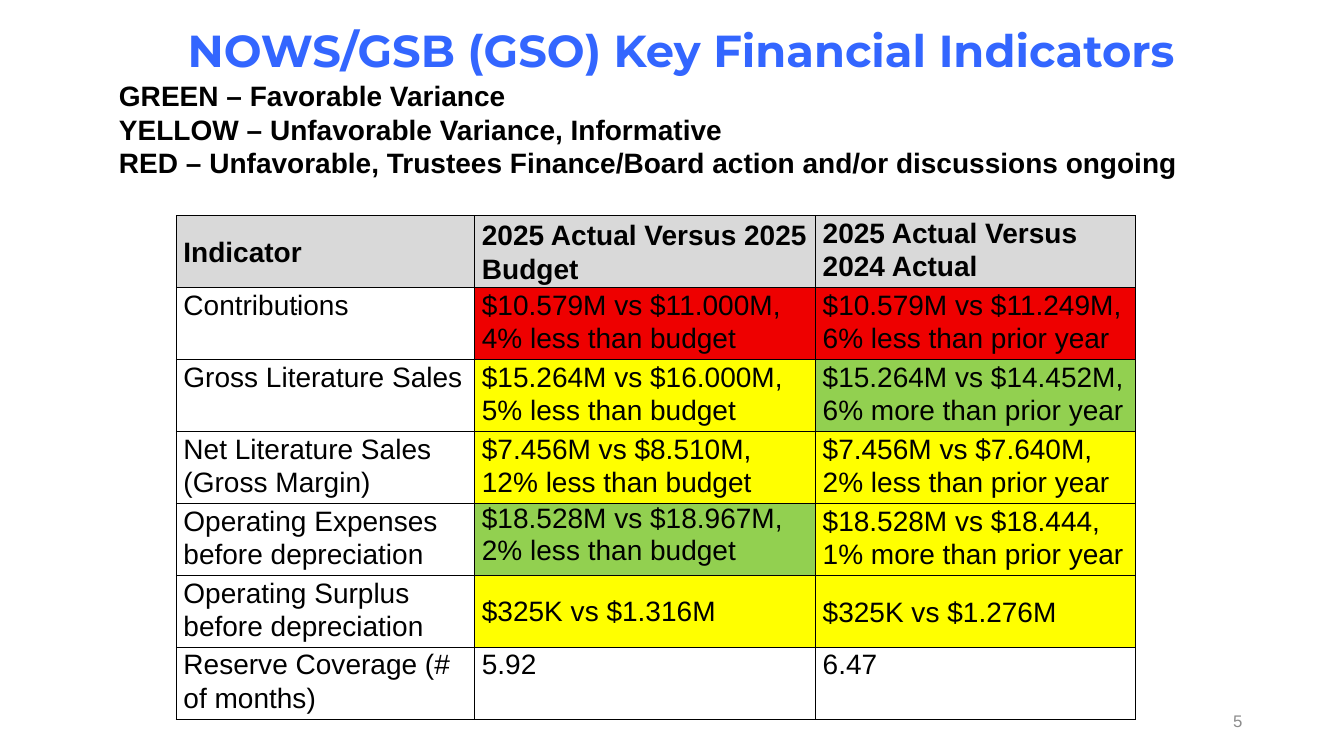
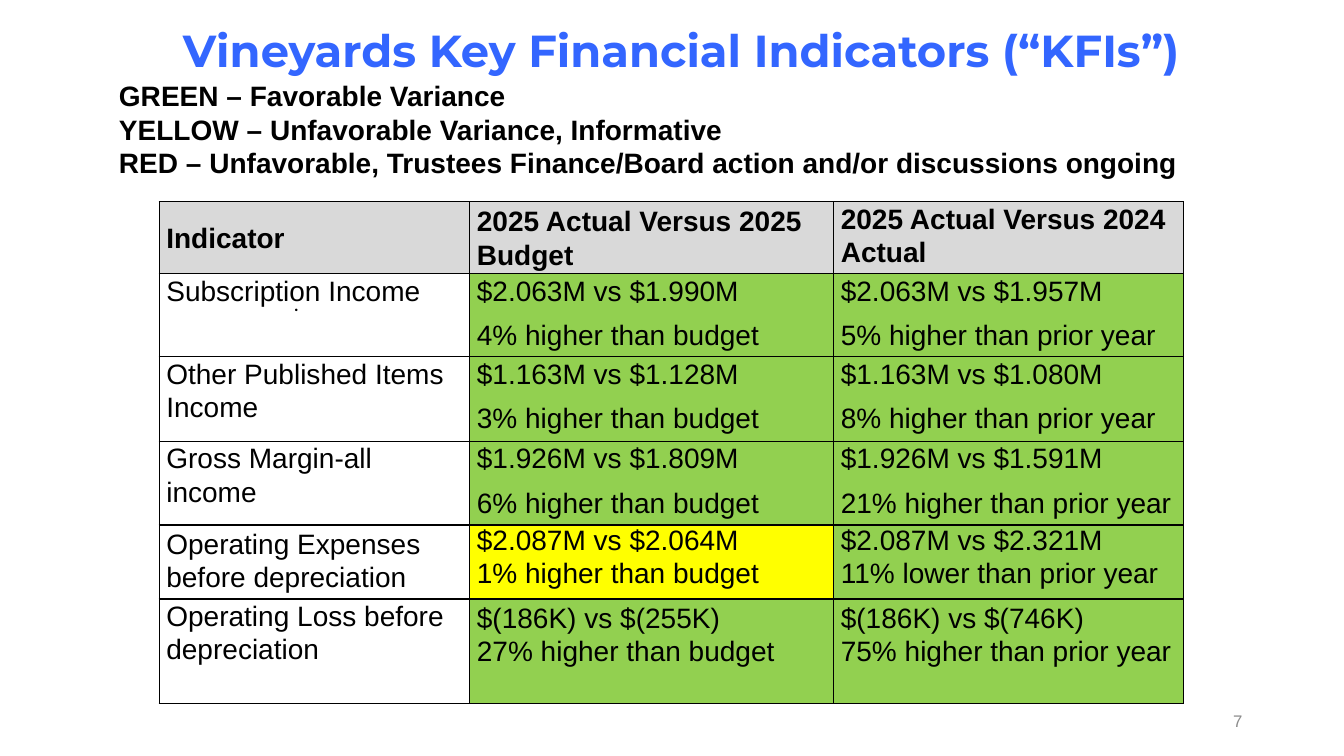
from dataclasses import dataclass

from lxml.etree import SubElement
from pptx import Presentation
from pptx.dml.color import RGBColor
from pptx.enum.text import MSO_ANCHOR, MSO_AUTO_SIZE, PP_ALIGN
from pptx.oxml import parse_xml
from pptx.oxml.ns import nsdecls, qn
from pptx.util import Inches, Pt


@dataclass(frozen=True)
class Theme:
    """Colours, fonts and type sizes of the whole presentation."""

    title_color: str = "3366FF"
    text_color: str = "000000"
    number_color: str = "8C8C8C"
    header: str = "D9D9D9"
    red: str = "EE0000"
    yellow: str = "FFFF00"
    green: str = "92D050"
    title_font: str = "Montserrat"
    text_font: str = "Arial"
    mark_font: str = "Calibri"
    title_size: int = 32
    text_size: int = 20
    small_size: int = 12
    border_width: int = 1


@dataclass(frozen=True)
class Entry:
    """Content and look of one table cell."""

    lines: tuple
    fill: str = ""
    tight: bool = False
    anchor: MSO_ANCHOR = MSO_ANCHOR.TOP
    bold: bool = False
    top_margin: float = 0


@dataclass(frozen=True)
class Box:
    """A region of the slide in inches."""

    left: float
    top: float
    width: float
    height: float

    def lengths(self):
        """Return the four measures as lengths."""
        return tuple(map(Inches, (self.left, self.top, self.width, self.height)))


THEME = Theme()
HEADING_BOX = Box(1.08, 0.24, 11.5, 1.6)
NUMBER_BOX = Box(9.42, 6.95, 3, 0.4)
MARK_BOX = Box(2.82, 2.87, 0.4, 0.3)
LEGEND = (
    "GREEN – Favorable Variance",
    "YELLOW – Unfavorable Variance, Informative",
    "RED – Unfavorable, Trustees Finance/Board action and/or discussions ongoing",
)
HEADER = (
    Entry(("Indicator",), "header", anchor=MSO_ANCHOR.MIDDLE, bold=True),
    Entry(("2025 Actual Versus 2025 Budget",), "header", anchor=MSO_ANCHOR.MIDDLE, bold=True),
    Entry(("2025 Actual Versus 2024 Actual",), "header", bold=True),
)


def entry(fill, *lines, **look):
    """Return a table cell with a status fill."""
    return Entry(lines, fill, **look)


MIDDLE = MSO_ANCHOR.MIDDLE
SERVICE_ROWS = (
    HEADER,
    (
        entry("", "Contributions"),
        entry("red", "$10.579M vs $11.000M, 4% less than budget"),
        entry("red", "$10.579M vs $11.249M, 6% less than prior year"),
    ),
    (
        entry("", "Gross Literature Sales"),
        entry("yellow", "$15.264M vs $16.000M, 5% less than budget"),
        entry("green", "$15.264M vs $14.452M, 6% more than prior year"),
    ),
    (
        entry("", "Net Literature Sales (Gross Margin)"),
        entry("yellow", "$7.456M vs $8.510M, 12% less than budget"),
        entry("yellow", "$7.456M vs $7.640M, 2% less than prior year"),
    ),
    (
        entry("", "Operating Expenses before depreciation"),
        entry("green", "$18.528M vs $18.967M, 2% less than budget", tight=True),
        entry("yellow", "$18.528M vs $18.444, 1% more than prior year"),
    ),
    (
        entry("", "Operating Surplus before depreciation"),
        entry("yellow", "$325K vs $1.316M", tight=True, anchor=MIDDLE),
        entry("yellow", "$325K vs $1.276M", anchor=MIDDLE),
    ),
    (
        entry("", "Reserve Coverage (# of months)"),
        entry("", "5.92"),
        entry("", "6.47"),
    ),
)
MAGAZINE_ROWS = (
    HEADER,
    (
        entry("", "Subscription Income"),
        entry("green", "$2.063M vs $1.990M", "4% higher than budget"),
        entry("green", "$2.063M vs $1.957M", "5% higher than prior year"),
    ),
    (
        entry("", "Other Published Items Income"),
        entry("green", "$1.163M vs $1.128M", "3% higher than budget"),
        entry("green", "$1.163M vs $1.080M", "8% higher than prior year"),
    ),
    (
        entry("", "Gross Margin-all income"),
        entry("green", "$1.926M vs $1.809M", "6% higher than budget"),
        entry("green", "$1.926M vs $1.591M", "21% higher than prior year"),
    ),
    (
        entry("", "Operating Expenses before depreciation", top_margin=0.02),
        entry("yellow", "$2.087M vs $2.064M", "1% higher than budget", tight=True),
        entry("green", "$2.087M vs $2.321M", "11% lower than prior year", tight=True),
    ),
    (
        entry("", "Operating Loss before depreciation"),
        entry("green", "$(186K) vs $(255K)", "27% higher than budget", tight=True, top_margin=0.04),
        entry("green", "$(186K) vs $(746K)", "75% higher than prior year", tight=True, top_margin=0.04),
    ),
)


def add_run(paragraph, text, size, color, font_name=THEME.text_font, bold=False):
    """Add one formatted run to a paragraph."""
    run = paragraph.add_run()
    run.text = text
    run.font.name = font_name
    run.font.size = Pt(size)
    run.font.bold = bold
    run.font.color.rgb = RGBColor.from_string(color)


def paragraphs_for(text_frame, lines):
    """Yield each line with its paragraph in the text frame."""
    for index, line in enumerate(lines):
        yield (text_frame.add_paragraph() if index else text_frame.paragraphs[0]), line


def place_placeholder(shape, box):
    """Move a placeholder to a box and fix its text behaviour."""
    shape.left, shape.top, shape.width, shape.height = box.lengths()
    text_frame = shape.text_frame
    text_frame.word_wrap = True
    text_frame.auto_size = MSO_AUTO_SIZE.NONE
    text_frame.vertical_anchor = MSO_ANCHOR.TOP
    return text_frame


def fill_heading(slide, title, box):
    """Fill the title and the colour legend below it."""
    title_box = Box(box.left, box.top, box.width - 0.14, 0.6)
    legend_box = Box(box.left, box.top + 0.49, box.width, box.height - 0.49)
    paragraph = place_placeholder(slide.shapes.title, title_box).paragraphs[0]
    paragraph.alignment = PP_ALIGN.CENTER
    paragraph.line_spacing = 0.9
    add_run(paragraph, title, THEME.title_size, THEME.title_color, THEME.title_font, True)
    text_frame = place_placeholder(slide.placeholders[1], legend_box)
    for paragraph, line in paragraphs_for(text_frame, LEGEND):
        properties = paragraph._p.get_or_add_pPr()
        properties.set("marL", "0")
        properties.set("indent", "0")
        SubElement(properties, qn("a:buNone"))
        paragraph.space_before = Pt(0)
        add_run(paragraph, line, THEME.text_size, THEME.text_color, bold=True)


def add_label(slide, text, box, color, font_name, alignment, bold=False):
    """Add a small one-line label."""
    text_frame = slide.shapes.add_textbox(*box.lengths()).text_frame
    text_frame.word_wrap = True
    text_frame.vertical_anchor = MSO_ANCHOR.MIDDLE
    paragraph = text_frame.paragraphs[0]
    paragraph.alignment = alignment
    add_run(paragraph, text, THEME.small_size, color, font_name, bold)


def set_borders(cell):
    """Draw a thin line on all four sides of a cell."""
    properties = cell._tc.get_or_add_tcPr()
    for index, side in enumerate(("lnL", "lnR", "lnT", "lnB")):
        line = parse_xml(
            f'<a:{side} {nsdecls("a")} w="{Pt(THEME.border_width)}"><a:solidFill>'
            f'<a:srgbClr val="{THEME.text_color}"/></a:solidFill></a:{side}>'
        )
        properties.insert(index, line)


def fill_cell(cell, content):
    """Write and format one table cell."""
    cell.margin_left = cell.margin_right = Inches(0.07)
    cell.margin_top, cell.margin_bottom = Inches(content.top_margin), Inches(0)
    cell.vertical_anchor = content.anchor
    if content.fill:
        cell.fill.solid()
        cell.fill.fore_color.rgb = RGBColor.from_string(getattr(THEME, content.fill))
    else:
        cell.fill.background()
    set_borders(cell)
    for index, (paragraph, line) in enumerate(paragraphs_for(cell.text_frame, content.lines)):
        if not content.tight:
            paragraph.line_spacing = 1.07
            paragraph.space_after = Pt(8)
        elif index:
            paragraph.space_before = Pt(1.1)
        add_run(paragraph, line, THEME.text_size, THEME.text_color, bold=content.bold)


def add_indicator_table(slide, rows, left, top, widths, heights):
    """Add the table of indicators with status colours."""
    box = Box(left, top, sum(widths), sum(heights))
    table = slide.shapes.add_table(len(rows), len(widths), *box.lengths()).table
    table.first_row = table.horz_banding = False
    for column, width in zip(table.columns, widths):
        column.width = Inches(width)
    for row, height, contents in zip(table.rows, heights, rows):
        row.height = Inches(height)
        for cell, content in zip(row.cells, contents):
            fill_cell(cell, content)


def add_indicator_slide(presentation, title, number, rows, left, top, widths, heights):
    """Add one slide of key financial indicators."""
    slide = presentation.slides.add_slide(presentation.slide_layouts[1])
    fill_heading(slide, title, HEADING_BOX)
    add_label(slide, number, NUMBER_BOX, THEME.number_color, THEME.text_font, PP_ALIGN.RIGHT)
    add_indicator_table(slide, rows, left, top, widths, heights)
    add_label(slide, ".", MARK_BOX, THEME.text_color, THEME.mark_font, PP_ALIGN.LEFT, True)


def main():
    """Build and save the presentation."""
    presentation = Presentation()
    presentation.slide_width, presentation.slide_height = Inches(13.33), Inches(7.5)
    add_indicator_slide(
        presentation, "NOWS/GSB (GSO) Key Financial Indicators", "5", SERVICE_ROWS,
        1.75, 2.14, (2.96, 3.38, 3.17), (0.66,) * len(SERVICE_ROWS),
    )
    add_indicator_slide(
        presentation, "Vineyards Key Financial Indicators (“KFIs”)", "7", MAGAZINE_ROWS,
        1.58, 2, (3.08, 3.61, 3.47), (0.71, 0.82, 0.84, 0.83, 0.72, 1.04),
    )
    presentation.save("out.pptx")


if __name__ == "__main__":
    main()
